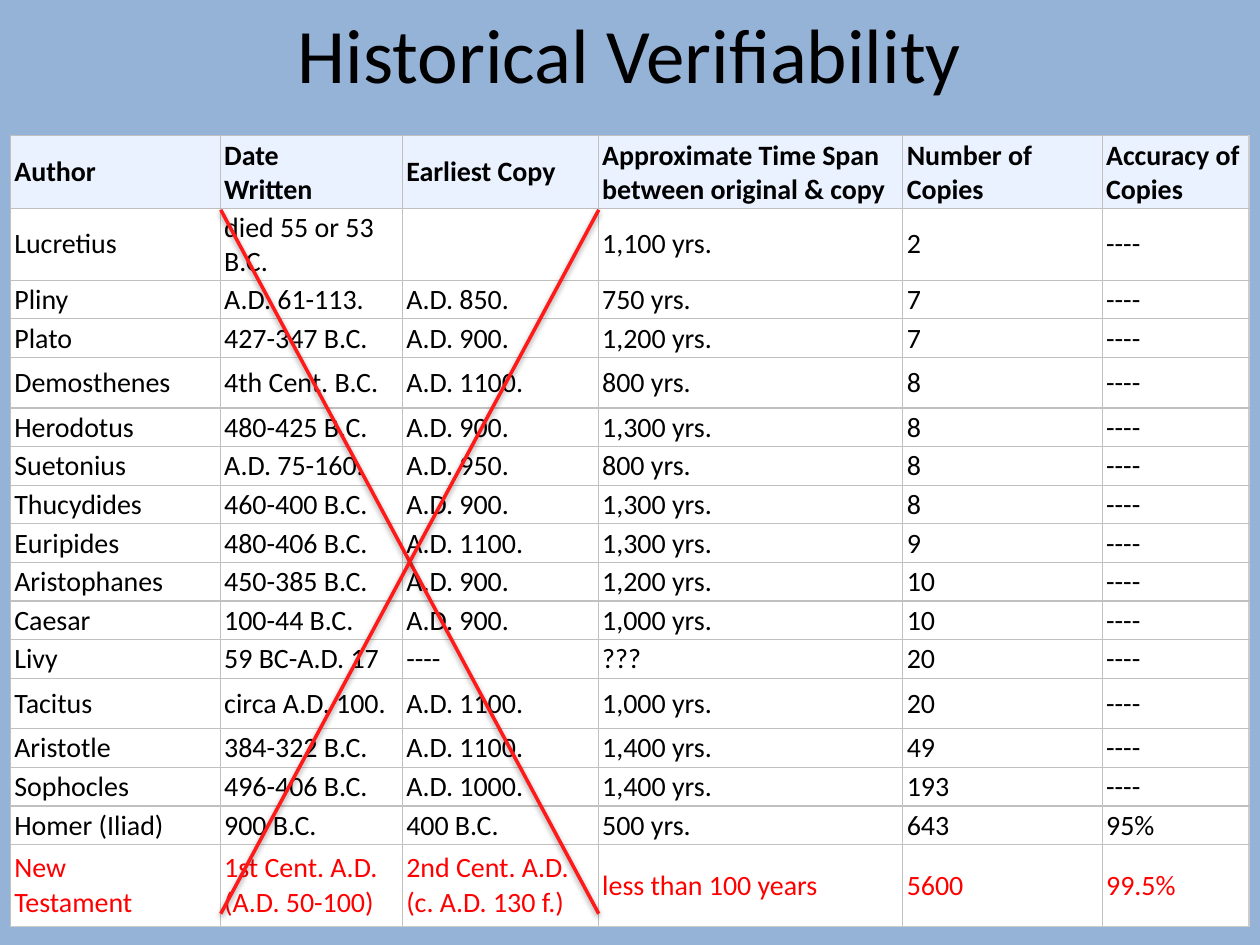
from dataclasses import dataclass

from lxml import etree
from pptx import Presentation
from pptx import util as u
from pptx.dml.color import RGBColor
from pptx.enum import shapes, text
from pptx.oxml.ns import qn

FONT = "Calibri"
BLACK, RED, WHITE = "000000", "FF0000", "FFFFFF"
BORDER, OUTER_BORDER = "C0C0C0", "CCCCCC"
COLUMN_WIDTHS = [4.23, 3.67, 3.95, 6.14, 4.02, 2.96]
HEADER_HEIGHT, ROW_HEIGHT, TALL_HEIGHT, LAST_HEIGHT = 0.85, 0.71, 1.02, 1.65
TABLE_LEFT, TABLE_TOP, TABLE_HEIGHT = 0.21, 2.74, 15.66
UNKNOWN = "----"


@dataclass
class Record:
    author: str
    written: str
    earliest: str
    span: str
    copies: str
    accuracy: str = UNKNOWN
    height: float = ROW_HEIGHT
    color: str = BLACK
    fill: str = WHITE
    bold: bool = False

    def values(self) -> list[str]:
        return [self.author, self.written, self.earliest,
                self.span, self.copies, self.accuracy]


@dataclass
class Stroke:
    start: tuple[float, float]
    end: tuple[float, float]


RECORDS = [
    Record("Author", "Date\vWritten", "Earliest Copy",
           "Approximate Time Span between original & copy", "Number of Copies",
           "Accuracy of Copies", HEADER_HEIGHT, fill="EAF2FF", bold=True),
    Record("Lucretius", "died 55 or 53 B.C.", "", "1,100 yrs.", "2", height=TALL_HEIGHT),
    Record("Pliny", "A.D. 61-113.", "A.D. 850.", "750 yrs.", "7"),
    Record("Plato", "427-347 B.C.", "A.D. 900.", "1,200 yrs.", "7"),
    Record("Demosthenes", "4th Cent. B.C.", "A.D. 1100.", "800 yrs.", "8", height=TALL_HEIGHT),
    Record("Herodotus", "480-425 B.C.", "A.D. 900.", "1,300 yrs.", "8"),
    Record("Suetonius", "A.D. 75-160.", "A.D. 950.", "800 yrs.", "8"),
    Record("Thucydides", "460-400 B.C.", "A.D. 900.", "1,300 yrs.", "8"),
    Record("Euripides", "480-406 B.C.", "A.D. 1100.", "1,300 yrs.", "9"),
    Record("Aristophanes", "450-385 B.C.", "A.D. 900.", "1,200 yrs.", "10"),
    Record("Caesar", "100-44 B.C.", "A.D. 900.", "1,000 yrs.", "10"),
    Record("Livy", "59 BC-A.D. 17", UNKNOWN, "???", "20"),
    Record("Tacitus", "circa A.D. 100.", "A.D. 1100.", "1,000 yrs.", "20", height=TALL_HEIGHT),
    Record("Aristotle", "384-322 B.C.", "A.D. 1100.", "1,400 yrs.", "49"),
    Record("Sophocles", "496-406 B.C.", "A.D. 1000.", "1,400 yrs.", "193"),
    Record("Homer (Iliad)", "900 B.C.", "400 B.C.", "500 yrs.", "643", "95%"),
    Record("New\vTestament", "1st Cent. A.D. (A.D. 50-100)",
           "2nd Cent. A.D.\v(c. A.D. 130 f.)", "less than 100 years",
           "5600", "99.5%", LAST_HEIGHT, RED),
]

CROSS_LEFT, CROSS_TOP, CROSS_RIGHT, CROSS_BOTTOM = 4.45, 4.23, 12.07, 18.42
CROSS = [
    Stroke((CROSS_LEFT, CROSS_TOP), (CROSS_RIGHT, CROSS_BOTTOM)),
    Stroke((CROSS_RIGHT, CROSS_TOP), (CROSS_LEFT, CROSS_BOTTOM)),
]


def rgb(color: str) -> RGBColor:
    return RGBColor.from_string(color)


def set_font(paragraph, size: float, color: str, bold: bool = False) -> None:
    font = paragraph.font
    font.name, font.size, font.bold = FONT, u.Pt(size), bold
    font.color.rgb = rgb(color)


def add_solid_fill(parent, color: str):
    fill = etree.SubElement(parent, qn("a:solidFill"))
    return etree.SubElement(fill, qn("a:srgbClr"), val=color)


def set_borders(cell, right: str, bottom: str) -> None:
    properties = cell._tc.get_or_add_tcPr()
    sides = {"a:lnL": BORDER, "a:lnR": right, "a:lnT": BORDER, "a:lnB": bottom}
    for position, (side, color) in enumerate(sides.items()):
        line = etree.Element(qn(side), w=str(u.Pt(0.75)))
        add_solid_fill(line, color)
        properties.insert(position, line)


def add_title(slide, title: str) -> None:
    shape = slide.shapes.add_textbox(u.Cm(1.27), u.Cm(0), u.Cm(22.86), u.Cm(2.12))
    frame = shape.text_frame
    frame.word_wrap = True
    frame.vertical_anchor = text.MSO_ANCHOR.MIDDLE
    frame.text = title
    paragraph = frame.paragraphs[0]
    paragraph.alignment = text.PP_ALIGN.CENTER
    set_font(paragraph, 44, BLACK)


def fill_cell(cell, value: str, record: Record) -> None:
    cell.text = value
    cell.vertical_anchor = text.MSO_ANCHOR.MIDDLE
    cell.margin_left = cell.margin_right = u.Cm(0.08)
    cell.margin_top = cell.margin_bottom = u.Cm(0.05)
    cell.fill.solid()
    cell.fill.fore_color.rgb = rgb(record.fill)
    set_font(cell.text_frame.paragraphs[0], 16, record.color, record.bold)


def add_records(slide, records: list[Record]) -> None:
    shape = slide.shapes.add_table(
        len(records), len(COLUMN_WIDTHS), u.Cm(TABLE_LEFT), u.Cm(TABLE_TOP),
        u.Cm(sum(COLUMN_WIDTHS)), u.Cm(TABLE_HEIGHT))
    table = shape.table
    table.first_row = table.horz_banding = False
    for column, width in zip(table.columns, COLUMN_WIDTHS):
        column.width = u.Cm(width)
    for row, record in zip(table.rows, records):
        row.height = u.Cm(record.height)
        bottom = OUTER_BORDER if record is records[-1] else BORDER
        for index, value in enumerate(record.values()):
            cell = row.cells[index]
            fill_cell(cell, value, record)
            right = OUTER_BORDER if index == len(COLUMN_WIDTHS) - 1 else BORDER
            set_borders(cell, right, bottom)
    shape.height = u.Cm(TABLE_HEIGHT)


def add_stroke(slide, stroke: Stroke) -> None:
    points = [u.Cm(value) for value in stroke.start + stroke.end]
    connector = slide.shapes.add_connector(shapes.MSO_CONNECTOR.STRAIGHT, *points)
    connector.line.color.rgb = rgb("FF1919")
    connector.line.width = u.Pt(2)
    effects = etree.SubElement(connector._element.spPr, qn("a:effectLst"))
    shadow = etree.SubElement(
        effects, qn("a:outerShdw"), blurRad=str(u.Pt(3.1)), dist=str(u.Pt(1.6)),
        dir="5400000", rotWithShape="0")
    color = etree.SubElement(shadow, qn("a:srgbClr"), val=BLACK)
    etree.SubElement(color, qn("a:alpha"), val="38000")


def main() -> None:
    presentation = Presentation()
    presentation.slide_width, presentation.slide_height = u.Cm(25.4), u.Cm(19.05)
    slide = presentation.slides.add_slide(presentation.slide_layouts[6])
    slide.background.fill.solid()
    slide.background.fill.fore_color.rgb = rgb("95B3D7")
    add_title(slide, "Historical Verifiability")
    add_records(slide, RECORDS)
    for stroke in CROSS:
        add_stroke(slide, stroke)
    presentation.save("out.pptx")


if __name__ == "__main__":
    main()
